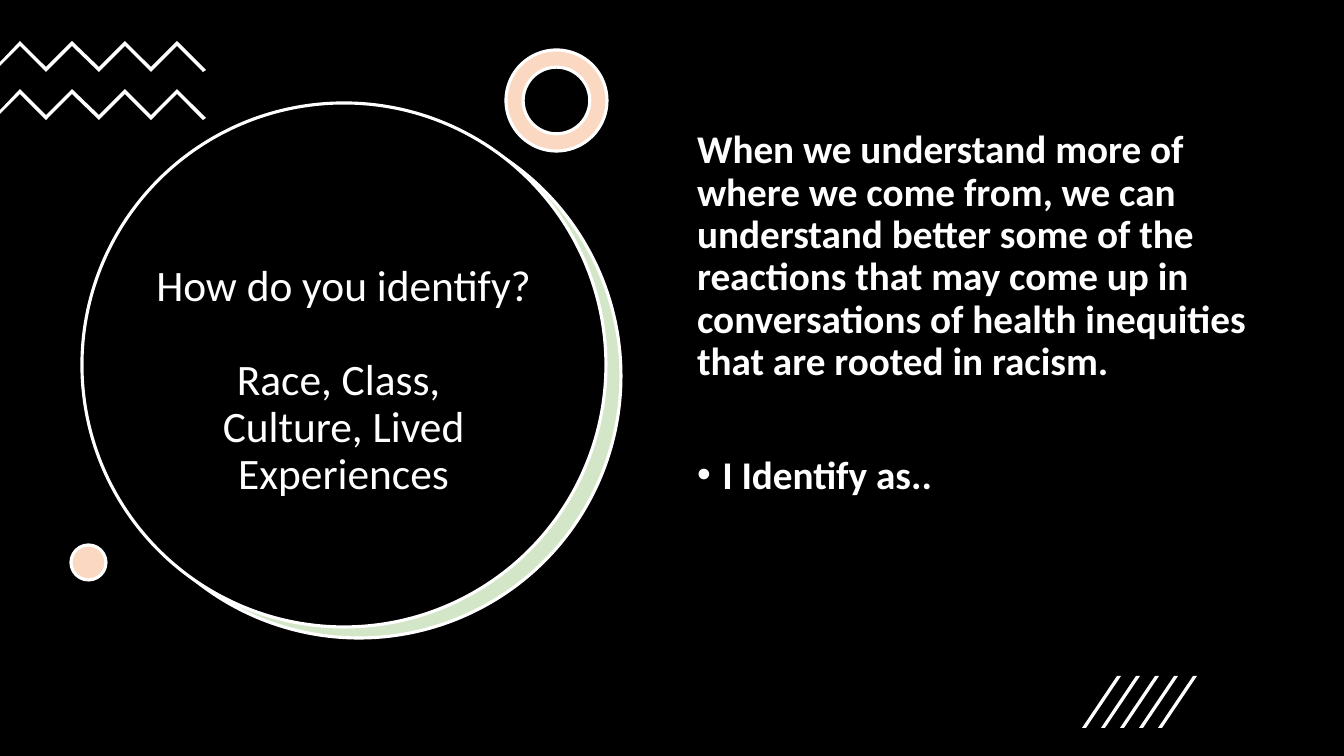
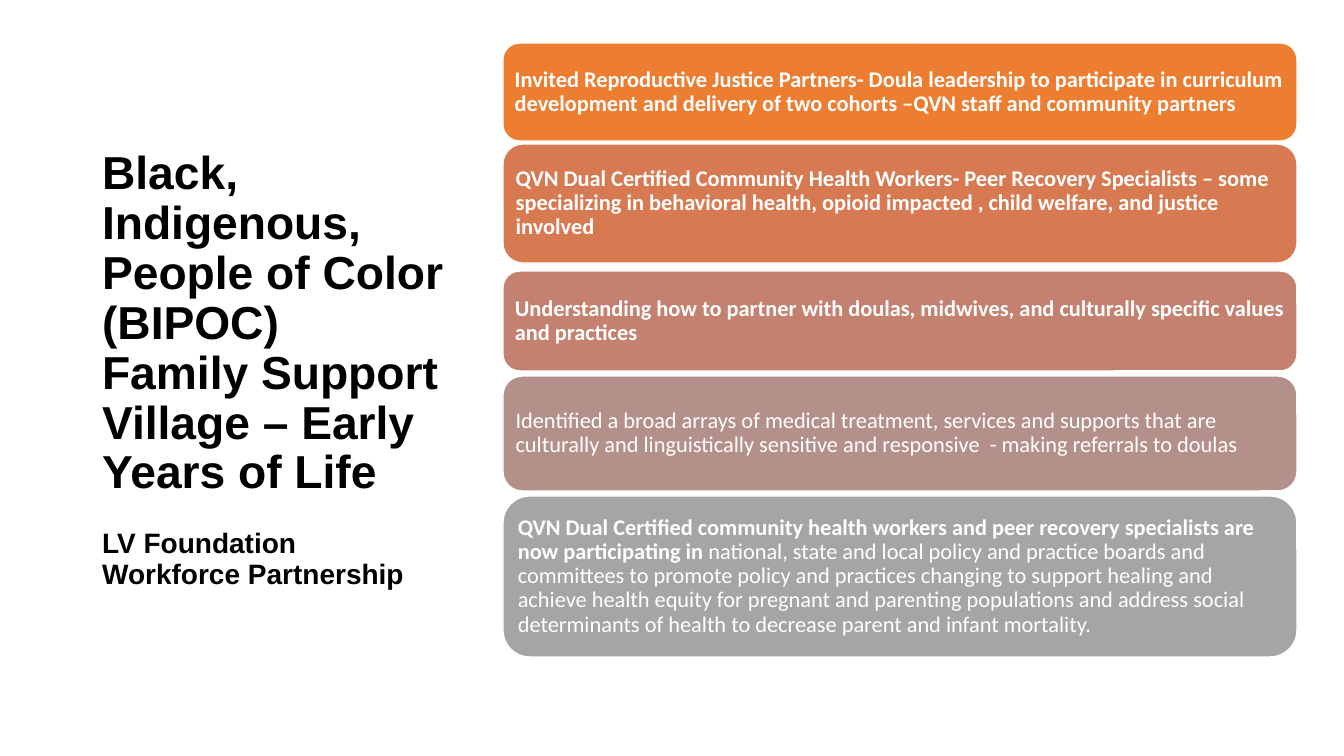
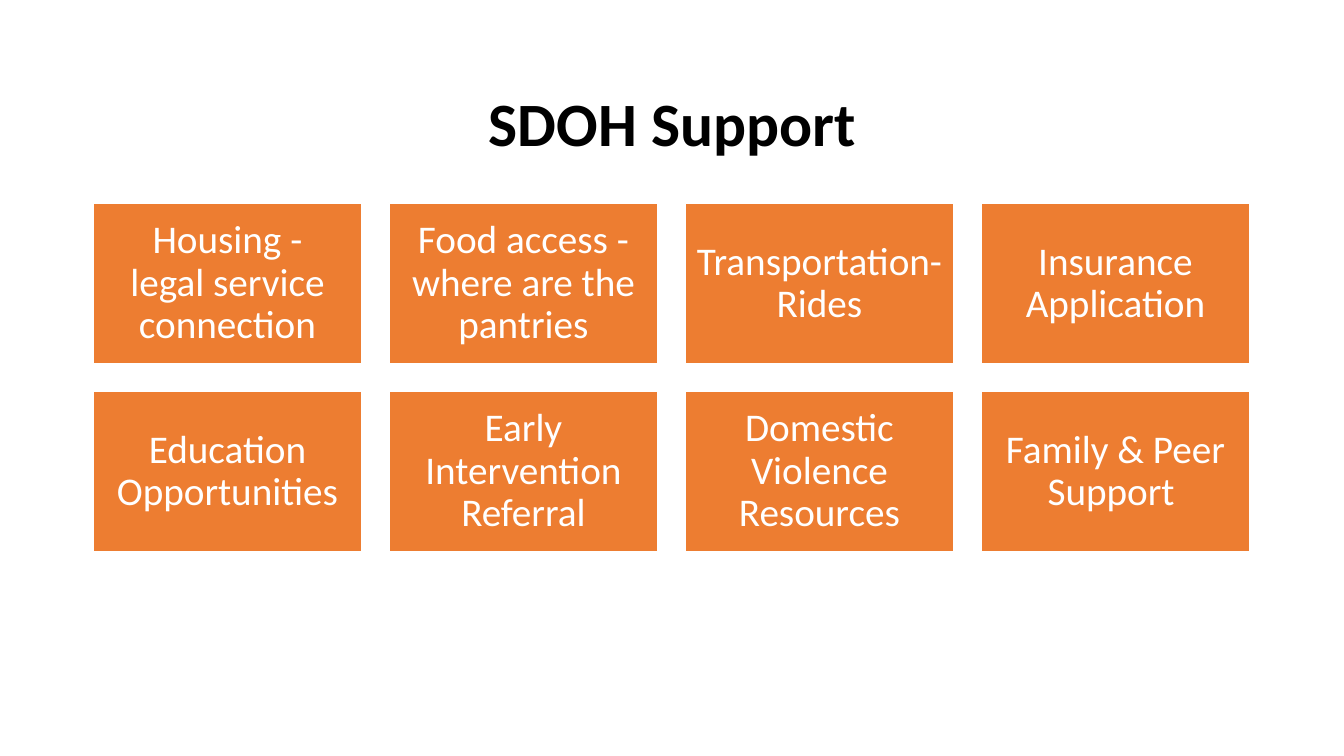
"""Build three slides on identity, family support and social needs."""
from lxml import etree
from pptx import Presentation
from pptx.dml.color import RGBColor
from pptx.enum.shapes import MSO_SHAPE
from pptx.enum.text import MSO_ANCHOR, MSO_AUTO_SIZE, PP_ALIGN
from pptx.oxml.ns import qn
from pptx.util import Pt

OVAL, DONUT = MSO_SHAPE.OVAL, MSO_SHAPE.DONUT
RECTANGLE, ROUNDED = MSO_SHAPE.RECTANGLE, MSO_SHAPE.ROUNDED_RECTANGLE
TOP, MIDDLE = MSO_ANCHOR.TOP, MSO_ANCHOR.MIDDLE
LEFT, CENTER = PP_ALIGN.LEFT, PP_ALIGN.CENTER
NO_AUTOFIT = MSO_AUTO_SIZE.NONE

PX = 12192000 / 1344
COLORS = {
    "black": "000000", "white": "FFFFFF", "orange": "ED7D31",
    "peach": "FAD8C1", "mint": "D4E6C8", "rust": "D87A51",
    "clay": "C48170", "mauve": "B4908B", "gray": "A5A5A5",
}
RGB = {name: RGBColor.from_string(value) for name, value in COLORS.items()}


def add_box(slide, kind, bounds, fill, line_width):
    """Add a filled preset shape with a white outline."""
    shape = slide.shapes.add_shape(kind, *[round(value * PX) for value in bounds])
    shape.shadow.inherit = False
    shape.fill.solid()
    shape.fill.fore_color.rgb = RGB[fill]
    shape.line.color.rgb = RGB["white"]
    shape.line.width = Pt(line_width)
    return shape


def write(shape, text, size, color="white", bold=False, align=CENTER,
          anchor=MIDDLE, font="Calibri", tail="", bounds=None, inset=None):
    """Fill a shape with formatted text, ending in an optional regular tail."""
    if bounds:
        shape.left, shape.top, shape.width, shape.height = [
            round(value * PX) for value in bounds]
    frame = shape.text_frame
    frame.text = text
    frame.word_wrap = True
    frame.auto_size = NO_AUTOFIT
    frame.vertical_anchor = anchor
    if inset:
        frame.margin_left = frame.margin_right = round(inset * PX)
        frame.margin_top = frame.margin_bottom = round(inset * PX)
    if tail:
        frame.paragraphs[-1].add_run().text = tail
    for paragraph in frame.paragraphs:
        paragraph.alignment = align
        paragraph.line_spacing = 0.9
        for run in paragraph.runs:
            run.font.name = font
            run.font.size = Pt(size)
            run.font.bold = bold and run.text != tail
            run.font.color.rgb = RGB[color]
    return frame.paragraphs


presentation = Presentation()
presentation.slide_width = round(1344 * PX)
presentation.slide_height = round(756 * PX)
slides = []
for layout_index, background in [(1, "black"), (5, "white"), (5, "white")]:
    slide = presentation.slides.add_slide(presentation.slide_layouts[layout_index])
    slide.background.fill.solid()
    slide.background.fill.fore_color.rgb = RGB[background]
    slides.append(slide)
identity, village, support = slides

for kind, bounds, fill in [
    (OVAL, (97, 114, 524, 524), "mint"),
    (OVAL, (82, 103, 524, 524), "black"),
    (DONUT, (506, 50, 101, 101), "peach"),
    (OVAL, (71, 545, 35, 35), "peach"),
]:
    shape = add_box(identity, kind, bounds, fill, 2.25)
    if kind == DONUT:
        shape.adjustments[0] = 0.17

outlines = []
for drop in (0, 48):
    corners = [(round(20 + 26.2 * i), 41 + drop + 26 * (i % 2)) for i in range(7)]
    lower_edge = [(x, y + 5) for x, y in reversed(corners)]
    outlines.append([(0, 62 + drop), *corners, (206, 70 + drop),
                     (203, 72 + drop), *lower_edge, (0, 66 + drop)])
for i in range(5):
    x = 1082 + 19 * i
    outlines.append([(x, 728), (x + 35, 676), (x + 39, 676), (x + 4, 728)])
for points in outlines:
    builder = identity.shapes.build_freeform(*points[0], scale=PX)
    builder.add_line_segments(points[1:], close=True)
    shape = builder.convert_to_shape()
    shape.shadow.inherit = False
    shape.fill.solid()
    shape.fill.fore_color.rgb = RGB["white"]
    shape.line.fill.background()

title = identity.shapes.title
title_lines = write(
    title, "How do you identify?\nRace, Class, \nCulture, Lived\nExperiences",
    31, bounds=(121, 204, 445, 355))
title_lines[1].space_before = Pt(34)
title.element.getparent().append(title.element)

statement, prompt = write(
    identity.placeholders[1],
    "When we understand more of where we come from, we can understand better "
    "some of the reactions that may come up in conversations of health "
    "inequities that are rooted in racism.\nI Identify as..",
    28, bold=True, align=LEFT, anchor=TOP, bounds=(687, 125, 576, 480))
for paragraph, space, indent, bullet in [
    (statement, 10, 0, "buNone"), (prompt, 51, 228600, "buChar"),
]:
    paragraph.space_before = Pt(space)
    properties = paragraph._p.get_or_add_pPr()
    properties.set("marL", str(indent))
    properties.set("indent", str(-indent))
    mark = etree.SubElement(properties, qn("a:" + bullet))
    if bullet == "buChar":
        mark.set("char", "•")

title_lines = write(
    village.shapes.title,
    "Black,\nIndigenous, People of Color (BIPOC)\n"
    "Family Support Village – Early Years of Life\n"
    "LV Foundation\nWorkforce Partnership",
    33, "black", True, LEFT, font="Arial", bounds=(92, 63, 372, 614))
title_lines[3].space_before = Pt(22)
for paragraph in title_lines[3:]:
    paragraph.runs[0].font.size = Pt(20)

for top, height, fill, lead, tail in [
    (43, 98, "orange",
     "Invited Reproductive Justice Partners- Doula leadership to participate in "
     "curriculum development and delivery of two cohorts –QVN staff and "
     "community partners", ""),
    (144, 119, "rust",
     "QVN Dual Certified Community Health Workers- Peer Recovery Specialists – "
     "some specializing in behavioral health, opioid impacted , child welfare, "
     "and justice involved", ""),
    (271, 100, "clay",
     "Understanding how to partner with doulas, midwives, and culturally "
     "specific values and practices", ""),
    (376, 115, "mauve", "",
     "Identified a broad arrays of medical treatment, services and supports "
     "that are culturally and linguistically sensitive and responsive  - making "
     "referrals to doulas"),
    (496, 161, "gray",
     "QVN Dual Certified community health workers and peer recovery specialists "
     "are now participating in ",
     "national, state and local policy and practice boards and committees to "
     "promote policy and practices changing to support healing and achieve "
     "health equity for pregnant and parenting populations and address social "
     "determinants of health to decrease parent and infant mortality."),
]:
    card = add_box(village, ROUNDED, (503, top, 794, height), fill, 1)
    write(card, lead, 16, bold=True, align=LEFT, tail=tail, inset=7)

write(support.shapes.title, "SDOH Support", 44, "black", True,
      bounds=(93, 64, 1159, 125))
needs = [
    "Housing -\nlegal service connection", "Food access - where are the pantries",
    "Transportation- Rides", "Insurance Application",
    "Education Opportunities", "Early Intervention Referral",
    "Domestic Violence Resources", "Family & Peer Support ",
]
for i, need in enumerate(needs):
    row, column = divmod(i, 4)
    bounds = (93 + 296 * column, 203 + 188 * row, 269, 161)
    write(add_box(support, RECTANGLE, bounds, "orange", 1), need, 28, inset=11)

presentation.save("out.pptx")
